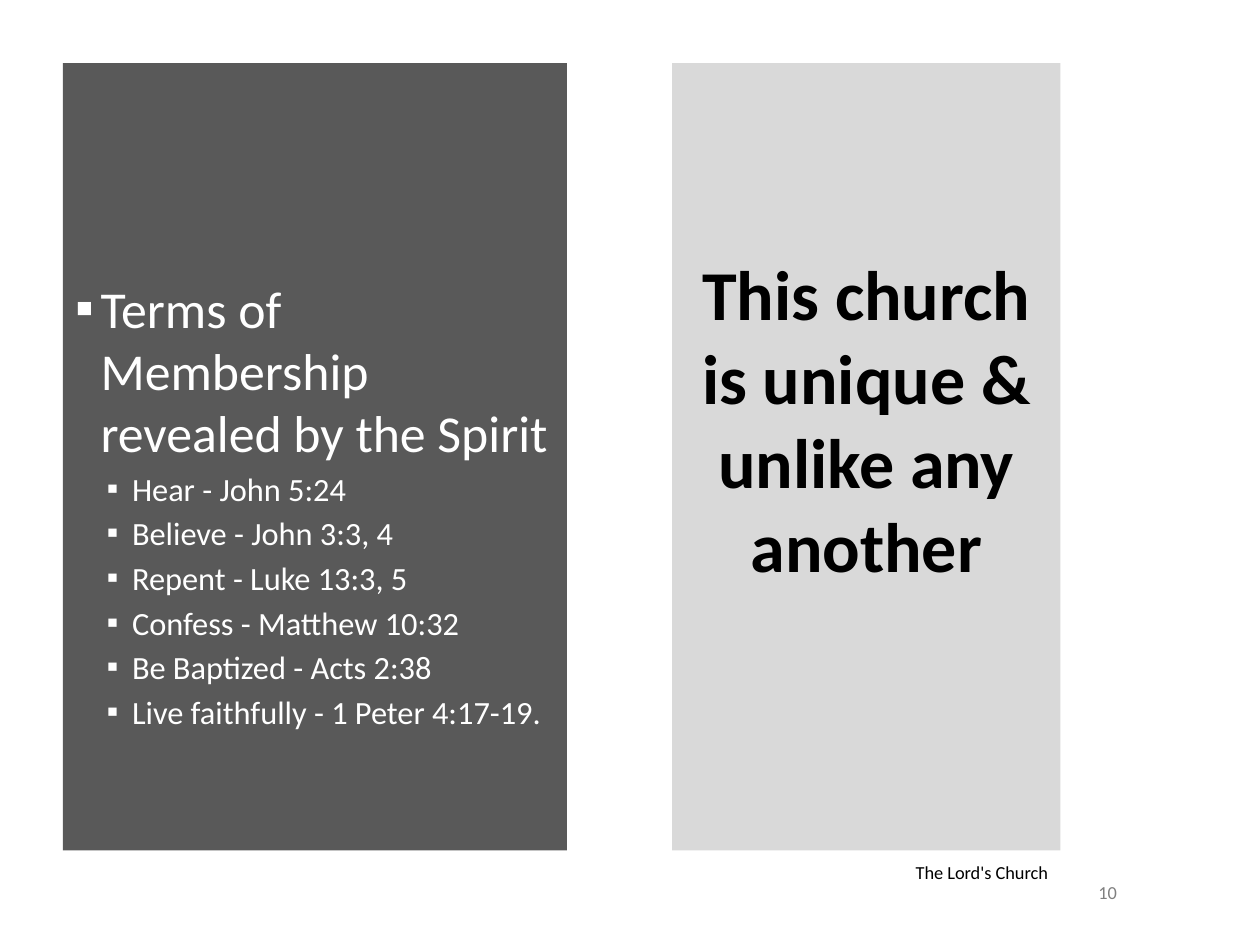
from pptx import Presentation
from pptx.dml.color import RGBColor
from pptx.enum.shapes import MSO_SHAPE
from pptx.enum.text import MSO_ANCHOR, MSO_AUTO_SIZE, PP_ALIGN
from pptx.oxml.ns import qn
from pptx.util import Pt
from lxml.etree import SubElement

DARK = RGBColor(0x59, 0x59, 0x59)
LIGHT = RGBColor(0xD9, 0xD9, 0xD9)
GREY = RGBColor(0x80, 0x80, 0x80)
WHITE = RGBColor(0xFF, 0xFF, 0xFF)
BLACK = RGBColor(0, 0, 0)

PANEL_TOP, PANEL_HEIGHT = Pt(36), Pt(450)
TITLE_LEFT, TITLE_WIDTH = Pt(384), Pt(222)


def apply(target, **values):
    """Set each named value as an attribute of target."""
    for name, value in values.items():
        setattr(target, name, value)


def add_bullet(para, left, indent):
    """Give para a white square bullet with a hanging indent."""
    properties = para._p.get_or_add_pPr()
    properties.set("marL", str(Pt(left)))
    properties.set("indent", str(Pt(indent)))
    color = SubElement(properties, qn("a:buClr"))
    SubElement(color, qn("a:srgbClr"), val=str(WHITE))
    SubElement(properties, qn("a:buFont"), typeface="Calibri")
    SubElement(properties, qn("a:buChar"), char="▪")


deck = Presentation()
apply(deck, slide_width=Pt(720), slide_height=Pt(540))
page = deck.slides.add_slide(deck.slide_layouts[5])

# Title panel
title = page.shapes.title
apply(title, left=TITLE_LEFT, top=PANEL_TOP, width=TITLE_WIDTH, height=PANEL_HEIGHT)
title.fill.solid()
title.fill.fore_color.rgb = LIGHT
apply(title.text_frame, text="This church is unique & unlike any another",
      word_wrap=True, auto_size=MSO_AUTO_SIZE.NONE,
      vertical_anchor=MSO_ANCHOR.MIDDLE, margin_bottom=Pt(47))
para = title.text_frame.paragraphs[0]
apply(para, alignment=PP_ALIGN.CENTER, line_spacing=Pt(48))
apply(para.font, name="Calibri", size=Pt(40), bold=True)
para.font.color.rgb = BLACK

# Terms panel
terms = [
    (0, "Terms of Membership revealed by the Spirit"),
    (1, "Hear - John 5:24"),
    (1, "Believe - John 3:3, 4"),
    (1, "Repent - Luke 13:3, 5"),
    (1, "Confess - Matthew 10:32"),
    (1, "Be Baptized - Acts 2:38"),
    (1, "Live faithfully - 1 Peter 4:17-19."),
]
level_styles = [(14.4, 29.6), (32.4, 18.5)]  # left indent, text size

panel = page.shapes.add_shape(MSO_SHAPE.RECTANGLE, Pt(36), PANEL_TOP, Pt(288), PANEL_HEIGHT)
panel.shadow.inherit = False
panel.fill.solid()
panel.fill.fore_color.rgb = DARK
panel.line.fill.background()
frame = panel.text_frame
apply(frame, word_wrap=True, vertical_anchor=MSO_ANCHOR.TOP, margin_top=Pt(122))
for index, (level, text) in enumerate(terms):
    para = frame.add_paragraph() if index else frame.paragraphs[0]
    left, size = level_styles[level]
    apply(para, text=text, level=level, alignment=PP_ALIGN.LEFT,
          space_before=Pt(3.3 if index else 0))
    add_bullet(para, left, -14.4)
    apply(para.font, name="Calibri", size=Pt(size))
    para.font.color.rgb = WHITE

# Page number and footer
small_texts = [
    ("10", Pt(612), Pt(504), Pt(42), MSO_ANCHOR.MIDDLE, PP_ALIGN.CENTER, GREY),
    ("The Lord's Church", TITLE_LEFT, Pt(496), TITLE_WIDTH, MSO_ANCHOR.BOTTOM,
     PP_ALIGN.RIGHT, BLACK),
]
for text, left, top, width, anchor, alignment, color in small_texts:
    box = page.shapes.add_textbox(left, top, width, Pt(12.2))
    apply(box.text_frame, text=text, word_wrap=True, vertical_anchor=anchor)
    para = box.text_frame.paragraphs[0]
    para.alignment = alignment
    apply(para.font, name="Calibri", size=Pt(10.5))
    para.font.color.rgb = color

deck.save("out.pptx")
